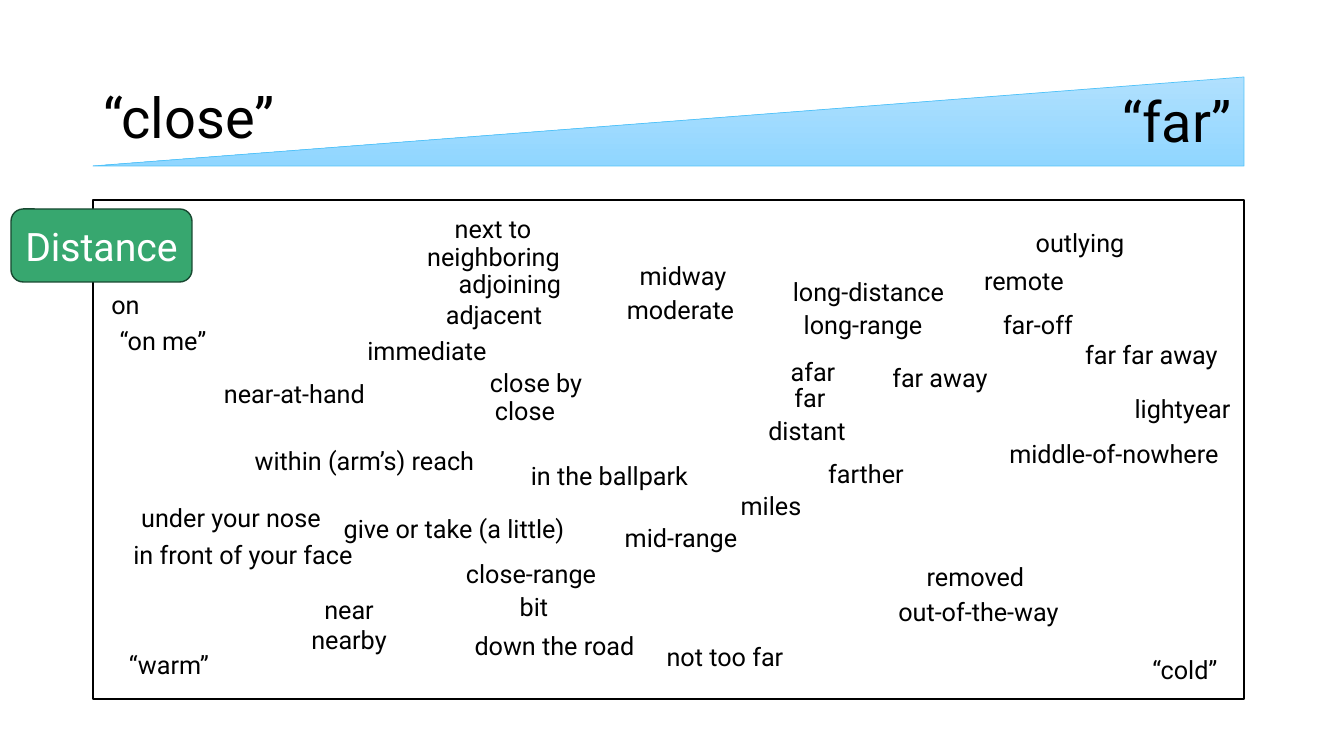
from dataclasses import dataclass

from pptx import Presentation
from pptx.dml.color import RGBColor
from pptx.enum.shapes import MSO_SHAPE
from pptx.enum.text import MSO_ANCHOR, MSO_AUTO_SIZE, PP_ALIGN
from pptx.util import Emu, Pt


@dataclass(frozen=True)
class Theme:
    font: str = "Roboto"
    ink: str = "000000"
    paper: str = "FFFFFF"
    wedge_light: str = "B0E0FE"
    wedge_dark: str = "90D6FF"
    wedge_line: str = "51C3F9"
    topic: str = "37A76F"
    topic_line: str = "184931"
    heading_size: int = 40
    topic_size: int = 28
    word_size: int = 18


def px(n):
    return Emu(round(n * 914400 / 100.8))


def rgb(color):
    return RGBColor.from_string(color)


class Board:
    def __init__(self, slide, theme):
        self.slide = slide
        self.theme = theme

    def shape(self, kind, box, line, weight, fill=None):
        s = self.slide.shapes.add_shape(kind, *map(px, box))
        s.shadow.inherit = False
        if fill:
            s.fill.solid()
            s.fill.fore_color.rgb = rgb(fill)
        s.line.color.rgb = rgb(line)
        s.line.width = Pt(weight)
        return s

    def wedge(self, box):
        t = self.theme
        s = self.shape(MSO_SHAPE.RIGHT_TRIANGLE, box, t.wedge_line, 0.5)
        s._element.spPr.get_or_add_xfrm().set("flipH", "1")
        s.fill.gradient()
        s.fill.gradient_angle = 270
        for stop, color in zip(s.fill.gradient_stops, (t.wedge_light, t.wedge_dark)):
            stop.color.rgb = rgb(color)

    def label(self, s, text, size, color, spacing=None):
        tf = s.text_frame
        tf.word_wrap = True
        tf.text = text
        for p in tf.paragraphs:
            p.alignment = PP_ALIGN.CENTER
            p.line_spacing = spacing
            p.font.name = self.theme.font
            p.font.size = Pt(size)
            p.font.color.rgb = rgb(color)
        return tf

    def topic(self, text, box):
        t = self.theme
        s = self.shape(MSO_SHAPE.ROUNDED_RECTANGLE, box, t.topic_line, 1, t.topic)
        tf = self.label(s, text, t.topic_size, t.paper)
        tf.vertical_anchor = MSO_ANCHOR.MIDDLE

    def heading(self, text, box):
        s = self.slide.shapes.add_textbox(*map(px, box))
        tf = self.label(s, text, self.theme.heading_size, self.theme.ink, 0.9)
        tf.vertical_anchor = MSO_ANCHOR.MIDDLE

    def word(self, text, x, y, w=118, h=40):
        s = self.slide.shapes.add_textbox(px(x), px(y), px(w), px(h))
        tf = self.label(s, text, self.theme.word_size, self.theme.ink)
        tf.auto_size = MSO_AUTO_SIZE.SHAPE_TO_FIT_TEXT


WORDS = [
    ("on", 90, 284, 71),
    ("“on me”", 104, 320),
    ("near-at-hand", 207, 373, 175),
    ("within (arm’s) reach", 237, 440, 255),
    ("under your nose", 112, 497, 238),
    ("in front of your face", 121, 534, 244),
    ("near\nnearby", 290, 589, 118, 72),
    ("“warm”", 110, 644),
    ("next to", 434, 208),
    ("neighboring", 414, 236, 159),
    ("adjoining", 444, 263, 132),
    ("adjacent", 435, 294),
    ("immediate", 356, 330, 142),
    ("close by", 477, 362),
    ("close", 466, 390),
    ("in the ballpark", 511, 455, 197),
    ("give or take (a little)", 326, 508, 256),
    ("close-range", 448, 553, 166),
    ("bit", 500, 586, 68),
    ("down the road", 453, 625, 203),
    ("midway", 624, 255),
    ("moderate", 614, 289, 133),
    ("mid-range", 598, 517, 166),
    ("not too far", 630, 636, 190),
    ("long-distance", 770, 271, 197),
    ("long-range", 780, 304, 166),
    ("afar", 754, 351),
    ("far", 751, 377),
    ("distant", 748, 410),
    ("farther", 807, 453),
    ("miles", 712, 485),
    ("outlying", 1021, 222),
    ("remote", 965, 260),
    ("far-off", 979, 304),
    ("far far away", 1066, 334, 171),
    ("far away", 881, 357),
    ("lightyear", 1116, 388, 133),
    ("middle-of-nowhere", 990, 433, 248),
    ("removed", 909, 556, 133),
    ("out-of-the-way", 877, 591, 203),
    ("“cold”", 1126, 649),
]


def main():
    prs = Presentation()
    prs.slide_width, prs.slide_height = px(1344), px(756)
    theme = Theme()
    board = Board(prs.slides.add_slide(prs.slide_layouts[6]), theme)
    board.shape(MSO_SHAPE.RECTANGLE, (93, 200, 1151, 499), theme.ink, 1, theme.paper)
    board.wedge((93, 77, 1151, 89))
    board.heading("“close”", (89, 73, 200, 95))
    board.topic("Distance", (11, 209, 181, 73))
    board.heading("“far”", (1102, 77, 150, 95))
    for word in WORDS:
        board.word(*word)
    prs.save("out.pptx")


if __name__ == "__main__":
    main()
